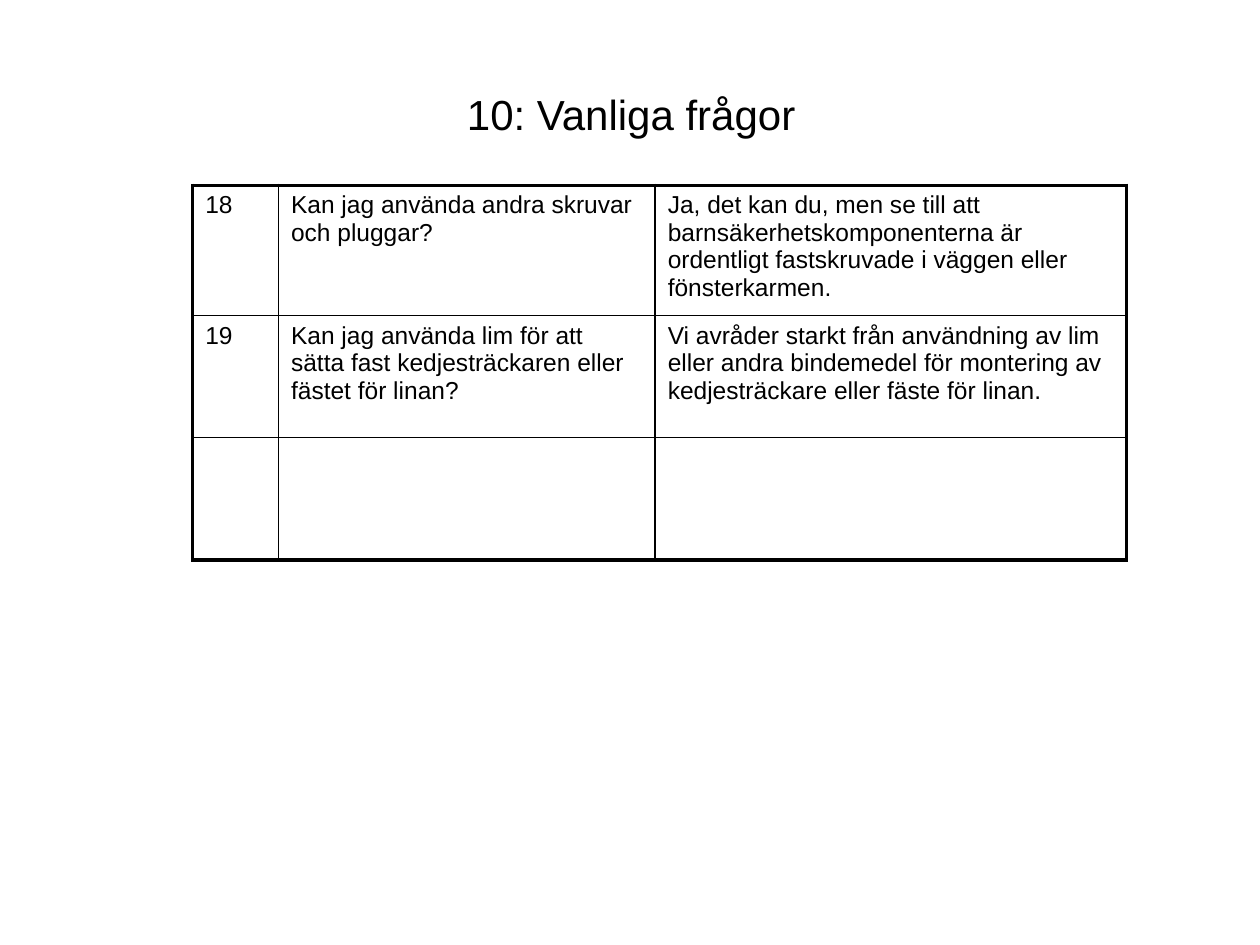
from dataclasses import dataclass

from lxml import etree
from pptx import Presentation
from pptx.dml.color import RGBColor
from pptx.enum.text import MSO_ANCHOR, PP_ALIGN
from pptx.oxml.ns import qn
from pptx.util import Inches, Pt

LEFT, CENTER = PP_ALIGN.LEFT, PP_ALIGN.CENTER
MIDDLE = MSO_ANCHOR.MIDDLE


@dataclass(frozen=True)
class Theme:
    font: str = "Arial"
    ink: str = "000000"
    paper: str = "FFFFFF"
    title_size: float = 24
    body_size: float = 14
    frame_width: float = 2.25
    grid_width: float = 1


def write_text(frame, text, *, theme, size, align=LEFT):
    paragraph = frame.paragraphs[0]
    paragraph.alignment = align
    run = paragraph.add_run()
    run.text = text
    run.font.name = theme.font
    run.font.size = Pt(size)
    run.font.color.rgb = RGBColor.from_string(theme.ink)


def set_border(cell, side, width, color):
    line = etree.SubElement(cell._tc.get_or_add_tcPr(), qn(f"a:ln{side}"), w=str(Pt(width)))
    fill = etree.SubElement(line, qn("a:solidFill"))
    etree.SubElement(fill, qn("a:srgbClr"), val=color)


class SlideBuilder:
    def __init__(self, slide, theme):
        self.slide = slide
        self.theme = theme
        background = slide.background.fill
        background.solid()
        background.fore_color.rgb = RGBColor.from_string(theme.paper)

    def title(self, text, left, top, width, height):
        heading = self.slide.shapes.add_textbox(
            Inches(left), Inches(top), Inches(width), Inches(height)
        )
        frame = heading.text_frame
        frame.word_wrap = True
        frame.vertical_anchor = MIDDLE
        write_text(frame, text, theme=self.theme, size=self.theme.title_size, align=CENTER)

    def table(self, rows, left, top, column_widths, row_height):
        theme = self.theme
        last_row, last_column = len(rows) - 1, len(column_widths) - 1
        grid = self.slide.shapes.add_table(
            len(rows), len(column_widths), Inches(left), Inches(top),
            Inches(sum(column_widths)), Inches(row_height * len(rows)),
        ).table
        grid.first_row = False
        grid.horz_banding = False
        for column, width in zip(grid.columns, column_widths):
            column.width = Inches(width)
        for r, row in enumerate(rows):
            for c, text in enumerate(row):
                cell = grid.cell(r, c)
                on_frame = {"L": c == 0, "R": c == last_column, "T": r == 0, "B": r == last_row}
                for side, outer in on_frame.items():
                    width = theme.frame_width if outer else theme.grid_width
                    set_border(cell, side, width, theme.ink)
                cell.fill.background()
                if text:
                    write_text(cell.text_frame, text, theme=theme, size=theme.body_size)


def main():
    presentation = Presentation()
    presentation.slide_width = Inches(10)
    presentation.slide_height = Inches(7.5)
    blank_layout = presentation.slide_layouts[6]
    builder = SlideBuilder(presentation.slides.add_slide(blank_layout), Theme())

    questions = [
        (
            "18",
            "Kan jag använda andra skruvar och pluggar?",
            "Ja, det kan du, men se till att barnsäkerhetskomponenterna är "
            "ordentligt fastskruvade i väggen eller fönsterkarmen.",
        ),
        (
            "19",
            "Kan jag använda lim för att sätta fast kedjesträckaren eller fästet för linan?",
            "Vi avråder starkt från användning av lim eller andra bindemedel "
            "för montering av kedjesträckare eller fäste för linan.",
        ),
        ("", "", ""),
    ]
    builder.title("10: Vanliga frågor", 0.51, 0.28, 9, 1.25)
    builder.table(questions, 1.53, 1.47, (0.68, 2.99, 3.74), 0.97)
    presentation.save("out.pptx")


if __name__ == "__main__":
    main()
